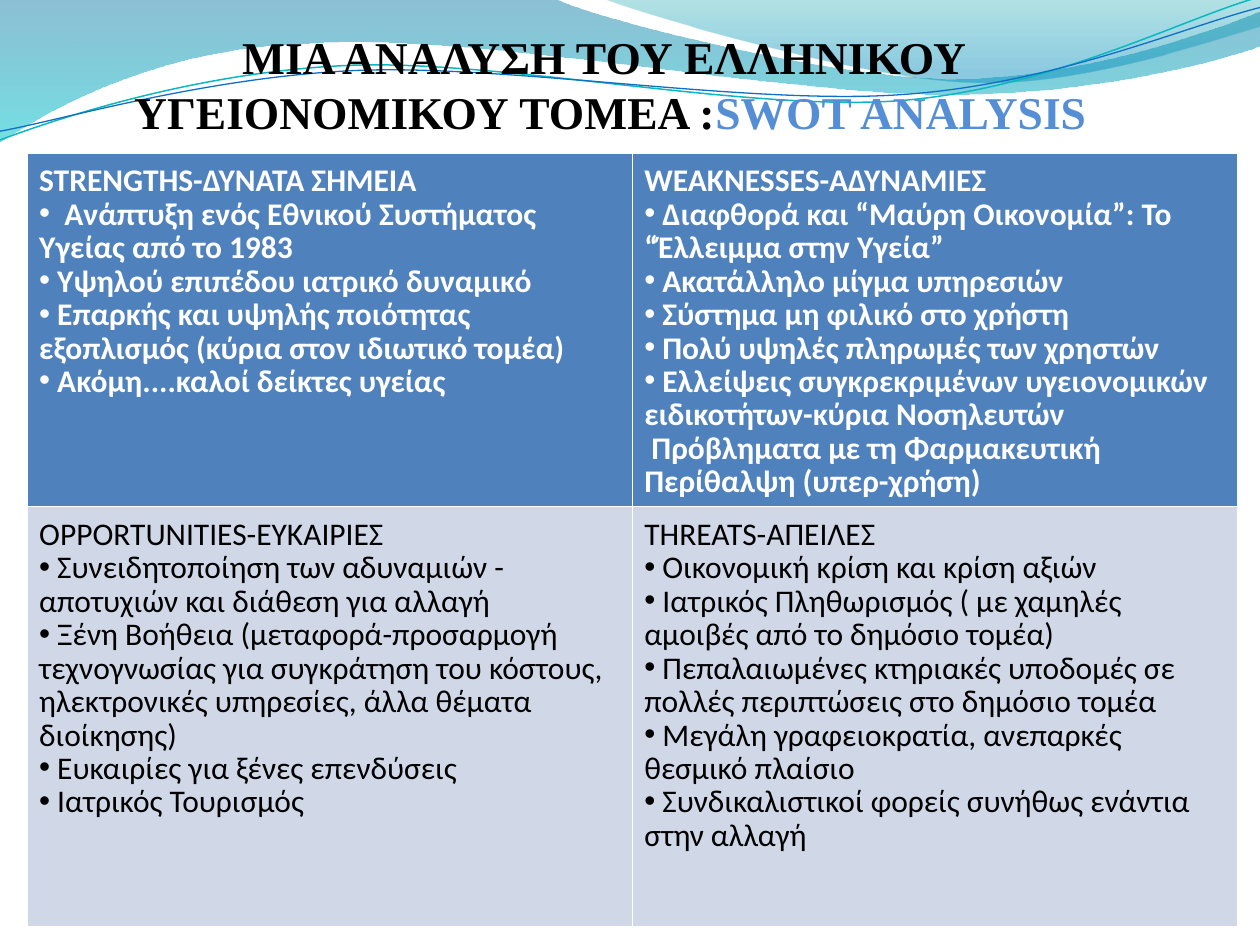
from dataclasses import dataclass

from lxml import etree
from pptx import Presentation
from pptx.dml.color import RGBColor
from pptx.enum import text
from pptx.oxml.ns import qn
from pptx.util import Pt


@dataclass(frozen=True)
class Theme:
    title_font: str = "Times New Roman"
    body_font: str = "Calibri"
    title_size: float = 26
    body_size: float = 18
    black: str = "000000"
    white: str = "FFFFFF"
    accent: str = "558ED5"
    top_row: str = "4F81BD"
    bottom_row: str = "D0D8E8"
    # stops: position, colour, opacity in percent
    left_wave: tuple = ((0, "0074A1", 45), (1, "00C6CF", 55))
    right_wave: tuple = ((0, "00A1A9", 30), (0.8, "008BBF", 45))
    teal_line: str = "0AB8BF"
    blue_line: str = "0F6FC6"


THEME = Theme()
SLIDE_WIDTH, SLIDE_HEIGHT = 720, 540

# Outlines: a 2-tuple is a straight line to a point, a 6-tuple a Bézier curve.
LEFT_WAVE = [(-0.7, -0.7), (317, -0.7), (343, 12, 478, 45, 546, 45), (614, 45, 690, 19, 720, 6.5),
             (720.7, 26), (708, 32, 626, 55, 537, 54), (448, 54, 275, 20, 185, 24.5),
             (93, 26, 33, 60, -0.7, 81.4)]
RIGHT_WAVE = [(345, -0.7), (366, 8, 491, 44.6, 554, 46.8), (616, 49.7, 692, 23, 720, 15),
              (720, -0.7)]
TEAL_LINE = [(0, 80), (34.6, 67, 113.8, 41, 199.4, 37.4), (284.4, 33.8, 427, 64, 513.4, 57.6),
             (599.8, 51, 675.4, 10.8, 718.6, -1.4)]
BLUE_LINE = [(0, 75), (33.8, 69, 118, 44, 203.8, 40.3), (290, 36.7, 430, 60.5, 516.2, 54),
             (602, 48.2, 677.5, 15, 720, 4.3)]

# Each quadrant: heading, bullets, closing lines without a bullet
SWOT = [
    [("STRENGTHS-ΔΥΝΑΤΑ ΣΗΜΕΙΑ",
      ["  Ανάπτυξη ενός Εθνικού Συστήματος Υγείας από το 1983",
       " Υψηλού επιπέδου ιατρικό δυναμικό",
       " Επαρκής και υψηλής ποιότητας εξοπλισμός (κύρια στον ιδιωτικό τομέα)",
       " Ακόμη....καλοί δείκτες υγείας"], []),
     ("WEAKNESSES-ΑΔΥΝΑΜΙΕΣ",
      [" Διαφθορά και “Μαύρη Οικονομία”: Το “Έλλειμμα στην Υγεία”",
       " Ακατάλληλο μίγμα υπηρεσιών",
       " Σύστημα μη φιλικό στο χρήστη",
       " Πολύ υψηλές πληρωμές των χρηστών",
       " Ελλείψεις συγκρεκριμένων υγειονομικών ειδικοτήτων-κύρια Νοσηλευτών"],
      [" Πρόβληματα με τη Φαρμακευτική Περίθαλψη (υπερ-χρήση)"])],
    [("OPPORTUNITIES-ΕΥΚΑΙΡΙΕΣ",
      [" Συνειδητοποίηση των αδυναμιών - αποτυχιών και διάθεση για αλλαγή",
       " Ξένη Βοήθεια (μεταφορά-προσαρμογή τεχνογνωσίας για συγκράτηση του κόστους, "
       "ηλεκτρονικές υπηρεσίες, άλλα θέματα διοίκησης)",
       " Ευκαιρίες για ξένες επενδύσεις",
       " Ιατρικός Τουρισμός"], []),
     ("THREATS-ΑΠΕΙΛΕΣ",
      [" Οικονομική κρίση και κρίση αξιών",
       " Ιατρικός Πληθωρισμός ( με χαμηλές αμοιβές από το δημόσιο τομέα)",
       " Πεπαλαιωμένες κτηριακές υποδομές σε πολλές περιπτώσεις στο δημόσιο τομέα",
       " Μεγάλη γραφειοκρατία, ανεπαρκές θεσμικό πλαίσιο",
       " Συνδικαλιστικοί φορείς συνήθως ενάντια στην αλλαγή"], [])],
]


def rgb(colour):
    return RGBColor.from_string(colour)


def add_run(paragraph, content, font, size, colour, bold):
    run = paragraph.add_run()
    run.text = content
    run.font.name = font
    run.font.size = Pt(size)
    run.font.bold = bold
    run.font.color.rgb = rgb(colour)


def add_outline(slide, outline, left, top, close):
    """Draw all points as a freeform, then join each curve's three into one Bézier."""
    points = [(Pt(left + part[i]), Pt(top + part[i + 1]))
              for part in outline for i in range(0, len(part), 2)]
    builder = slide.shapes.build_freeform(*points[0])
    builder.add_line_segments(points[1:], close=close)
    shape = builder.convert_to_shape()
    shape.shadow.inherit = False
    segments = iter(list(shape.element.iter(qn("a:lnTo"))))
    for part in outline[1:]:
        segment = next(segments)
        if len(part) == 6:
            segment.tag = qn("a:cubicBezTo")
            for _ in range(2):
                extra = next(segments)
                segment.append(extra[0])
                extra.getparent().remove(extra)
    return shape


def add_wave(slide, outline, left, top, stops):
    shape = add_outline(slide, outline, left, top, close=True)
    shape.line.fill.background()
    shape.fill.gradient()
    shape.fill.gradient_angle = 270
    for stop, (position, colour, _) in zip(shape.fill.gradient_stops, stops):
        stop.position = position
        stop.color.rgb = rgb(colour)
    for element, (_, _, opacity) in zip(shape.element.iter(qn("a:srgbClr")), stops):
        etree.SubElement(element, qn("a:alpha"), val=str(opacity * 1000))


def add_wave_line(slide, outline, left, top, colour, width):
    shape = add_outline(slide, outline, left, top, close=False)
    shape.fill.background()
    shape.line.color.rgb = rgb(colour)
    shape.line.width = Pt(width)


def add_wave_header(slide, left, top):
    add_wave(slide, LEFT_WAVE, left, top, THEME.left_wave)
    add_wave(slide, RIGHT_WAVE, left, top, THEME.right_wave)
    add_wave_line(slide, TEAL_LINE, left, top, THEME.teal_line, 0.85)
    add_wave_line(slide, BLUE_LINE, left, top, THEME.blue_line, 0.75)


def place_title(slide, left, top, width, height):
    title = slide.shapes.title
    title.left, title.top, title.width, title.height = map(Pt, (left, top, width, height))
    slide.shapes.element.append(title.element)  # bring in front of the waves
    frame = title.text_frame
    frame.word_wrap = True
    frame.auto_size = text.MSO_AUTO_SIZE.NONE
    frame.vertical_anchor = text.MSO_ANCHOR.MIDDLE
    lines = [[("ΜΙΑ ΑΝΑΛΥΣΗ ΤΟΥ ΕΛΛΗΝΙΚΟΥ ", THEME.black)],
             [("ΥΓΕΙΟΝΟΜΙΚΟΥ ΤΟΜΕΑ :", THEME.black), ("SWOT ANALYSIS", THEME.accent)]]
    for index, line in enumerate(lines):
        paragraph = frame.add_paragraph() if index else frame.paragraphs[0]
        paragraph.alignment = text.PP_ALIGN.CENTER
        paragraph.space_before = Pt(0)
        for content, colour in line:
            add_run(paragraph, content, THEME.title_font, THEME.title_size, colour, True)


def add_bullet(paragraph, colour):
    properties = paragraph._p.get_or_add_pPr()
    bullet_colour = etree.SubElement(properties, qn("a:buClr"))
    etree.SubElement(bullet_colour, qn("a:srgbClr"), val=colour)
    etree.SubElement(properties, qn("a:buFont"), typeface="Arial")
    etree.SubElement(properties, qn("a:buChar"), char="•")


def set_borders(cell, widths):
    properties = cell._tc.get_or_add_tcPr()
    for index, (side, width) in enumerate(widths.items()):
        line = etree.Element(qn(f"a:ln{side}"), w=str(Pt(width)))
        fill = etree.SubElement(line, qn("a:solidFill"))
        etree.SubElement(fill, qn("a:srgbClr"), val=THEME.white)
        properties.insert(index, line)


def fill_quadrant(cell, quadrant, fill, colour, bold):
    heading, bullets, closing = quadrant
    cell.fill.solid()
    cell.fill.fore_color.rgb = rgb(fill)
    cell.margin_left = cell.margin_right = cell.margin_top = Pt(7.2)
    cell.margin_bottom = Pt(3.6)
    cell.vertical_anchor = text.MSO_ANCHOR.TOP
    lines = [(heading, False), *((line, True) for line in bullets),
             *((line, False) for line in closing)]
    for index, (content, bulleted) in enumerate(lines):
        paragraph = cell.text_frame.add_paragraph() if index else cell.text_frame.paragraphs[0]
        paragraph.line_spacing = 0.87
        if bulleted:
            add_bullet(paragraph, colour)
        add_run(paragraph, content, THEME.body_font, THEME.body_size, colour, bold)


def add_swot_table(slide, left, top, width, row_heights):
    frame = slide.shapes.add_table(2, 2, Pt(left), Pt(top), Pt(width), Pt(sum(row_heights)))
    table = frame.table
    table.first_row = table.horz_banding = False
    for row, height in zip(table.rows, row_heights):
        row.height = Pt(height)
    styles = [(THEME.top_row, THEME.white, True), (THEME.bottom_row, THEME.black, False)]
    borders = [{"L": 0.06, "R": 0.06, "T": 0.06, "B": 0.17},
               {"L": 0.06, "R": 0.06, "T": 0.17, "B": 0.06}]
    for row, quadrants in enumerate(SWOT):
        for column, quadrant in enumerate(quadrants):
            cell = table.cell(row, column)
            fill_quadrant(cell, quadrant, *styles[row])
            set_borders(cell, borders[row])


def main():
    presentation = Presentation()
    presentation.slide_width, presentation.slide_height = Pt(SLIDE_WIDTH), Pt(SLIDE_HEIGHT)
    slide = presentation.slides.add_slide(presentation.slide_layouts[5])
    add_wave_header(slide, 0, 0)
    place_title(slide, 0, 6, 697.5, 84)
    add_swot_table(slide, 15.2, 87.2, 691.6, (202, 240))
    presentation.save("out.pptx")


if __name__ == "__main__":
    main()
